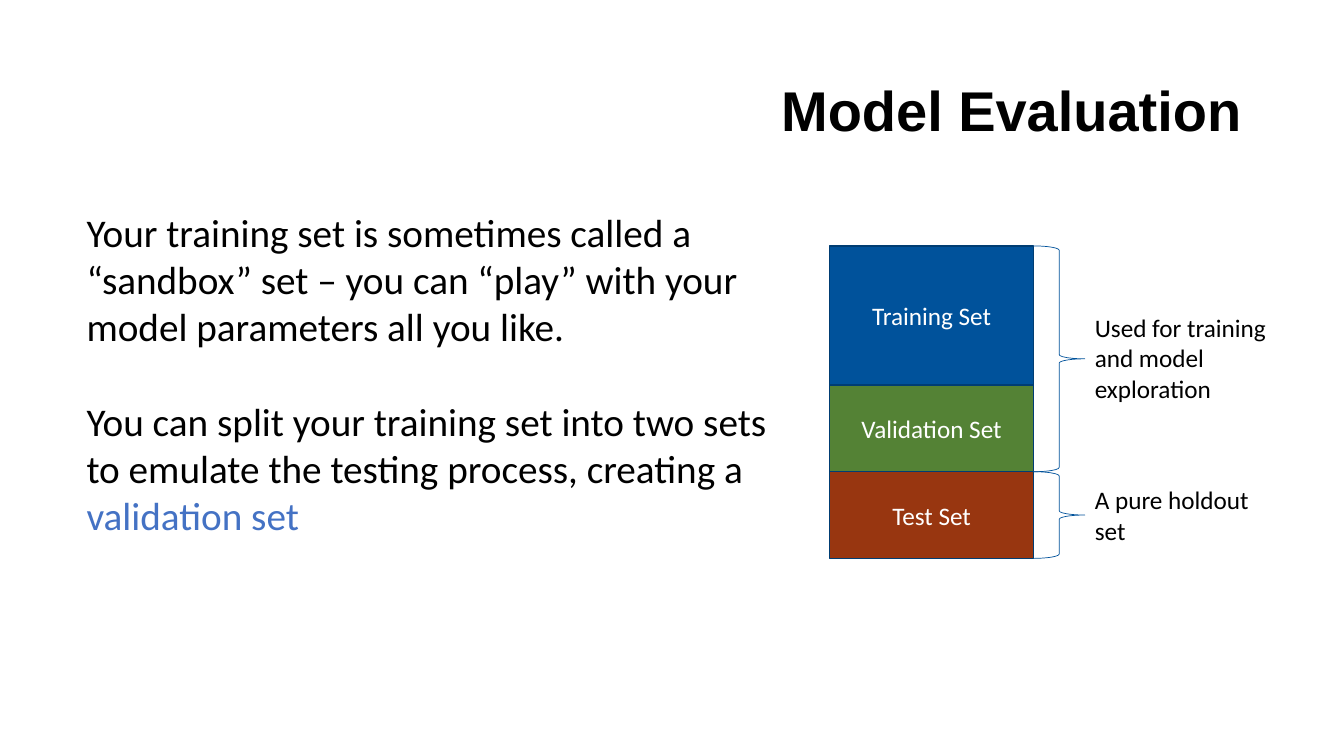
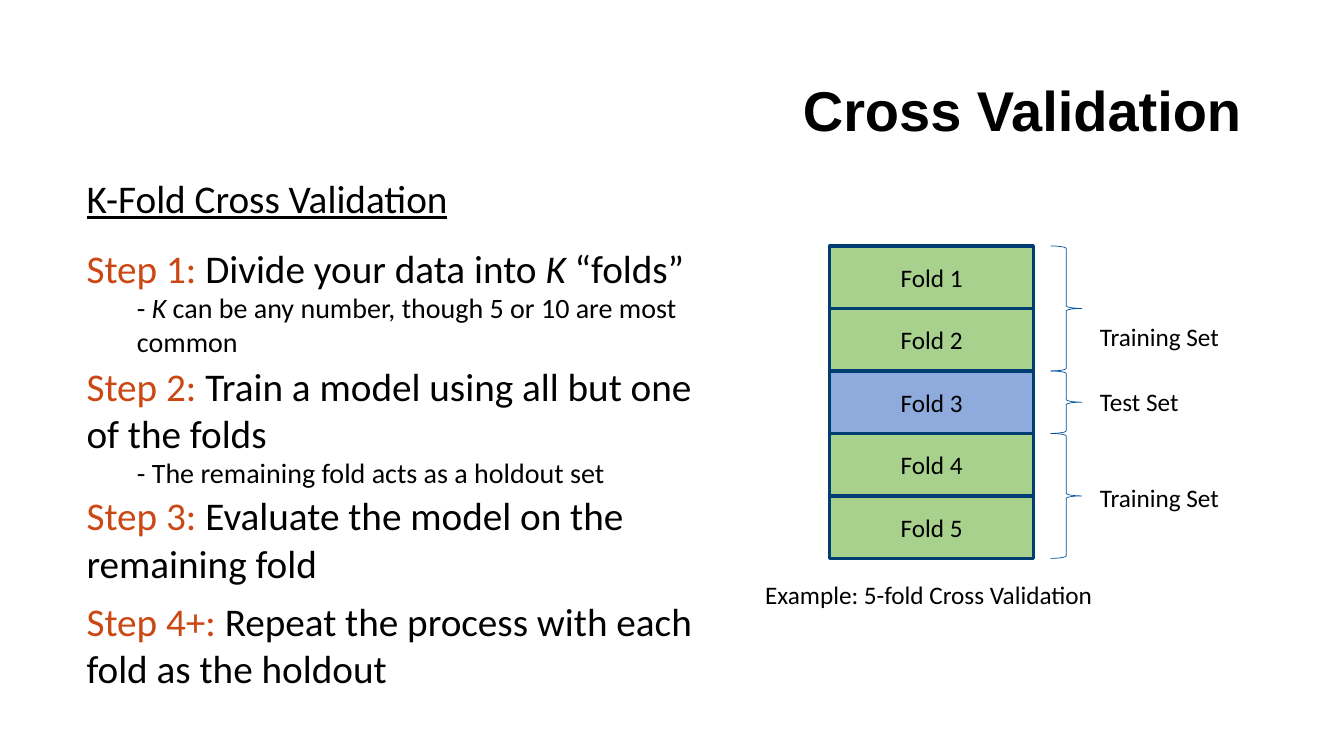
from dataclasses import dataclass
from pptx import Presentation
from pptx.dml.color import RGBColor
from pptx.enum import shapes, text
from pptx.util import Inches, Pt


@dataclass(frozen=True)
class Theme:
    head: str = "Arial"
    body: str = "Calibri"
    title: int = 40
    large: int = 28
    note: int = 20
    small: int = 18
    black: str = "000000"
    white: str = "FFFFFF"
    navy: str = "003D73"
    blue: str = "00529B"
    green: str = "548235"
    rust: str = "983610"
    link: str = "4472C4"
    step: str = "CB4815"
    lime: str = "A9D18E"
    sky: str = "8FAADC"


T = Theme()
TOP, LEFT, WIDE = 2.44, 8.23, 2.02
MARGIN = 0.76

INTRO = [
    [("Your training set is sometimes called a “sandbox” set – you can “play” "
      "with your model parameters all you like.", {})],
    [("You can split your training set into two sets to emulate the testing "
      "process, creating a ", {}), ("validation set", {"color": T.link})],
]
SETS = [("Training Set", 1.38, T.blue), ("Validation Set", 0.86, T.green),
        ("Test Set", 0.86, T.rust)]
USES = [(0, 2, "Used for training and model exploration", 3.05, 1.01),
        (2, 3, "A pure holdout set", 4.76, 0.71)]

STEPS = [
    (2.37, 1.25, "Step 1: ",
     [("Divide your data into ", {}), ("K", {"italic": True}), (" “folds”", {})],
     [("- ", {}), ("K", {"italic": True}),
      (" can be any number, though 5 or 10 are most common", {})]),
    (3.54, 1.38, "Step 2: ",
     [("Train a model using all but one of the folds", {})],
     [("- The remaining fold acts as a holdout set", {})]),
    (4.83, 1.04, "Step 3: ",
     [("Evaluate the model on the remaining fold", {})], []),
    (5.88, 1.04, "Step 4+: ",
     [("Repeat the process with each fold as the holdout", {})], []),
]
FOLDS = [(f"Fold {n}", 0.62, T.sky if n == 3 else T.lime) for n in range(1, 6)]
ROLES = [(0, 2, "Training Set", 3.14, 1.4), (2, 3, "Test Set", 3.78, 0.99),
         (3, 5, "Training Set", 4.74, 1.4)]


def style(run, size, color=T.black, face=T.body, **marks):
    font = run.font
    font.size, font.name = Pt(size), face
    font.color.rgb = RGBColor.from_string(color)
    for mark, value in marks.items():
        setattr(font, mark, value)


def fill_para(para, parts, size):
    for words, marks in parts:
        run = para.add_run()
        run.text = words
        style(run, size, **marks)


def add_text(slide, box, paras, size=T.small, wrap=True):
    frame = slide.shapes.add_textbox(*map(Inches, box)).text_frame
    frame.word_wrap = wrap
    for i, parts in enumerate(paras):
        para = frame.add_paragraph() if i else frame.paragraphs[0]
        fill_para(para, parts, size)
    return frame


def add_slide(deck, title):
    slide = deck.slides.add_slide(deck.slide_layouts[6])
    marks = {"face": T.head, "bold": True}
    frame = add_text(slide, (0.86, 0.4, 11.55, 1.45), [[(title, marks)]], T.title)
    frame.vertical_anchor = text.MSO_ANCHOR.MIDDLE
    para = frame.paragraphs[0]
    para.alignment, para.line_spacing = text.PP_ALIGN.RIGHT, 0.9
    return slide


def add_stack(slide, bars, color, weight):
    edges = [TOP]
    for label, tall, fill in bars:
        bar = slide.shapes.add_shape(
            shapes.MSO_SHAPE.RECTANGLE,
            *map(Inches, (LEFT, edges[-1], WIDE, tall)))
        bar.shadow.inherit = False
        bar.fill.solid()
        bar.fill.fore_color.rgb = RGBColor.from_string(fill)
        bar.line.color.rgb = RGBColor.from_string(T.navy)
        bar.line.width = Pt(weight)
        frame = bar.text_frame
        frame.vertical_anchor = text.MSO_ANCHOR.MIDDLE
        para = frame.paragraphs[0]
        para.alignment = text.PP_ALIGN.CENTER
        fill_para(para, [(label, {"color": color})], T.small)
        edges.append(edges[-1] + tall)
    return edges


def add_brace(slide, left, wide, top, end):
    brace = slide.shapes.add_shape(
        shapes.MSO_SHAPE.RIGHT_BRACE, *map(Inches, (left, top, wide, end - top)))
    brace.shadow.inherit = False
    brace.fill.background()
    brace.line.color.rgb = RGBColor.from_string(T.blue)
    brace.line.width = Pt(0.5)


def build_model(deck):
    slide = add_slide(deck, "Model Evaluation")
    frame = add_text(slide, (MARGIN, 2.02, 7.08, 3.87), INTRO, T.large)
    frame.paragraphs[1].space_before = Pt(34)
    edges = add_stack(slide, SETS, T.white, 1)
    for first, last, words, top, tall in USES:
        add_brace(slide, LEFT + WIDE, 0.51, edges[first], edges[last])
        add_text(slide, (10.76, top, WIDE, tall), [[(words, {})]])


def build_cross(deck):
    slide = add_slide(deck, "Cross Validation")
    add_text(slide, (MARGIN, 1.68, 7.08, 0.57),
             [[("K-Fold Cross Validation", {"underline": True})]], T.large)
    for top, tall, name, task, note in STEPS:
        lead = [(name, {"color": T.step})]
        frame = add_text(slide, (MARGIN, top, 6.21, tall), [lead + task], T.large)
        if note:
            para = frame.add_paragraph()
            para.level = 1
            props = para._p.get_or_add_pPr()
            props.set("marL", str(Inches(0.5)))
            props.set("indent", "0")
            fill_para(para, note, T.note)
    edges = add_stack(slide, FOLDS, T.black, 2.25)
    for first, last, words, top, wide in ROLES:
        add_brace(slide, 10.42, 0.31, edges[first], edges[last])
        add_text(slide, (10.81, top, wide, 0.4), [[(words, {})]], wrap=False)
    add_text(slide, (7.49, 5.7, 3.49, 0.4),
             [[("Example: 5-fold Cross Validation", {})]], wrap=False)


def main():
    deck = Presentation()
    deck.slide_width, deck.slide_height = Inches(13.33), Inches(7.5)
    build_model(deck)
    build_cross(deck)
    deck.save("out.pptx")


if __name__ == "__main__":
    main()
